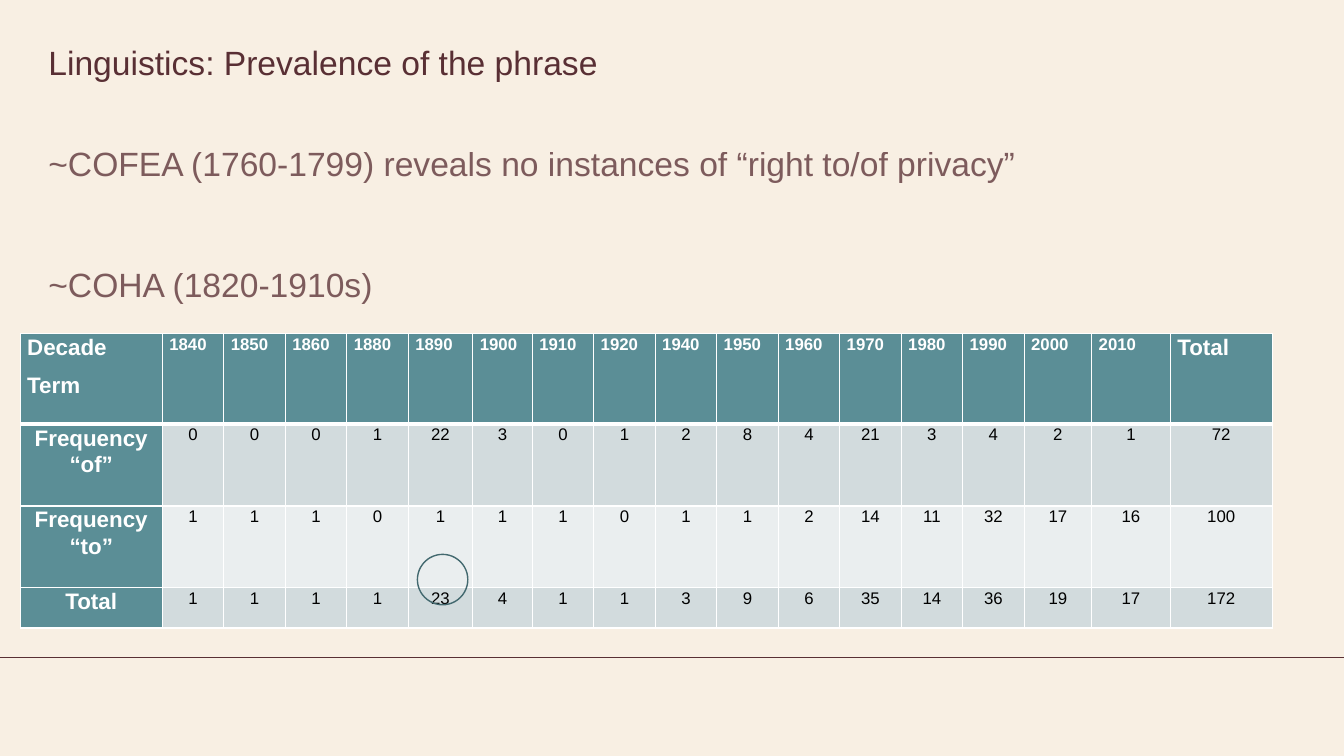
from dataclasses import dataclass

from lxml import etree
from pptx import Presentation
from pptx.dml.color import RGBColor
from pptx.enum.shapes import MSO_CONNECTOR, MSO_SHAPE
from pptx.enum.text import MSO_ANCHOR, MSO_AUTO_SIZE, PP_ALIGN
from pptx.oxml.ns import qn
from pptx.util import Inches, Pt

STRAIGHT = MSO_CONNECTOR.STRAIGHT
CIRCLE = MSO_SHAPE.FLOWCHART_CONNECTOR
TOP = MSO_ANCHOR.TOP
NO_FIT = MSO_AUTO_SIZE.NONE
LEFT, CENTER = PP_ALIGN.LEFT, PP_ALIGN.CENTER


@dataclass(frozen=True)
class Theme:
    """Colours and type sizes of the slide."""
    font: str = "Arial"
    background: str = "F8EFE3"
    ink: str = "592F34"
    header: str = "5B8E96"
    bands: tuple = ("D2DBDD", "EAEEEF")
    white: str = "FFFFFF"
    black: str = "000000"
    ring: str = "43696F"
    heading_size: int = 24
    label_size: int = 16
    value_size: int = 12
    body_alpha: int = 77


THEME = Theme()
DECADES = [1840, 1850, 1860, 1880, 1890, 1900, 1910, 1920,
           1940, 1950, 1960, 1970, 1980, 1990, 2000, 2010]
OF_COUNTS = [0, 0, 0, 1, 22, 3, 0, 1, 2, 8, 4, 21, 3, 4, 2, 1]
TO_COUNTS = [1, 1, 1, 0, 1, 1, 1, 0, 1, 1, 2, 14, 11, 32, 17, 16]
COLUMN_WIDTHS = [1.41] + [0.61] * 4 + [0.64, 0.59] + [0.61] * 8 + [0.67, 0.78, 1.01]
ROW_HEIGHTS = [0.9, 0.81, 0.81, 0.4]


def rgb(code):
    """Turn a hex code into a colour."""
    return RGBColor.from_string(code)


def style_para(para, size, color, bold=False, align=LEFT):
    """Format a paragraph and its spans."""
    para.alignment = align
    for span in para.runs:
        span.font.name = THEME.font
        span.font.size = Pt(size)
        span.font.bold = bold
        span.font.color.rgb = rgb(color)


def fill_placeholder(box, area, lines):
    """Move a placeholder and set its lines in the heading style."""
    box.left, box.top, box.width, box.height = map(Inches, area)
    frame = box.text_frame
    frame.text = "\n".join(lines)
    frame.margin_left = frame.margin_right = 0
    frame.margin_top = frame.margin_bottom = 0
    frame.vertical_anchor = TOP
    frame.auto_size = NO_FIT
    frame.word_wrap = True
    for para in frame.paragraphs:
        style_para(para, THEME.heading_size, THEME.ink)


def format_findings(box):
    """Space the body lines, remove bullets and soften the ink."""
    for para, gap in zip(box.text_frame.paragraphs, (8, 52)):
        para.line_spacing = 1.2
        para.space_before = Pt(gap)
        properties = para._p.get_or_add_pPr()
        properties.set("marL", "0")
        properties.set("indent", "0")
        etree.SubElement(properties, qn("a:buNone"))
        for color in para._p.iter(qn("a:srgbClr")):
            etree.SubElement(color, qn("a:alpha"), val=str(THEME.body_alpha * 1000))


def add_rule(page, top, width):
    """Draw the horizontal rule across the page."""
    rule = page.shapes.add_connector(STRAIGHT, 0, top, width, top)
    rule.line.color.rgb = rgb(THEME.ink)
    rule.line.width = Pt(0.75)
    etree.SubElement(rule._element.spPr, qn("a:effectLst"))


def set_borders(cell, top, bottom):
    """Give a cell white borders of the given top and bottom widths."""
    properties = cell._tc.get_or_add_tcPr()
    for side, width in (("L", 1), ("R", 1), ("T", top), ("B", bottom)):
        line = etree.SubElement(properties, qn(f"a:ln{side}"), w=str(Pt(width)))
        fill = etree.SubElement(line, qn("a:solidFill"))
        etree.SubElement(fill, qn("a:srgbClr"), val=THEME.white)


def format_cell(cell, text, row, column):
    """Write one table cell, styled by its place in the grid."""
    is_header, is_label = row == 0, column == 0
    set_borders(cell, 3 if row == 1 else 1, 3 if is_header else 1)
    colored = is_header or is_label
    cell.fill.solid()
    cell.fill.fore_color.rgb = rgb(THEME.header if colored else THEME.bands[(row - 1) % 2])
    cell.margin_left = cell.margin_right = Inches(0.07)
    cell.margin_top = cell.margin_bottom = 0
    cell.text_frame.text = text
    large = is_label or text == "Total"
    for para in cell.text_frame.paragraphs:
        style_para(para, THEME.label_size if large else THEME.value_size,
                   THEME.white if colored else THEME.black,
                   colored, LEFT if is_header else CENTER)
        para.line_spacing = 1.07
        para.space_after = Pt(8)


def add_frequency_table(page):
    """Add the counts by decade, with computed totals."""
    totals = [of + to for of, to in zip(OF_COUNTS, TO_COUNTS)]
    rows = [["Decade\nTerm", *DECADES, "Total"]]
    for label, counts in (("Frequency “of”", OF_COUNTS),
                          ("Frequency “to”", TO_COUNTS), ("Total", totals)):
        rows.append([label, *counts, sum(counts)])
    table = page.shapes.add_table(
        len(rows), len(rows[0]), Inches(0.2), Inches(3.31),
        Inches(sum(COLUMN_WIDTHS)), Inches(sum(ROW_HEIGHTS))).table
    for column, width in zip(table.columns, COLUMN_WIDTHS):
        column.width = Inches(width)
    for row, height in zip(table.rows, ROW_HEIGHTS):
        row.height = Inches(height)
    for row, values in enumerate(rows):
        for column, value in enumerate(values):
            format_cell(table.cell(row, column), str(value), row, column)
    table.cell(0, 0).text_frame.paragraphs[0].space_before = Pt(20)


def add_ring(page):
    """Circle the 1890 total."""
    ring = page.shapes.add_shape(CIRCLE, Inches(4.14), Inches(5.5), Inches(0.5), Inches(0.5))
    ring.shadow.inherit = False
    ring.fill.background()
    ring.line.color.rgb = rgb(THEME.ring)
    ring.line.width = Pt(1)


def main():
    """Build and save the deck."""
    deck = Presentation()
    deck.slide_width, deck.slide_height = Inches(13.33), Inches(7.5)
    page = deck.slides.add_slide(deck.slide_layouts[1])
    page.background.fill.solid()
    page.background.fill.fore_color.rgb = rgb(THEME.background)
    title, body = page.placeholders
    add_rule(page, Inches(6.52), deck.slide_width)
    fill_placeholder(title, (0.48, 0.42, 8.32, 1.5),
                     ["Linguistics: Prevalence of the phrase"])
    fill_placeholder(body, (0.48, 1.34, 12.13, 0.81),
                     ["~COFEA (1760-1799) reveals no instances of “right to/of privacy”",
                      "~COHA (1820-1910s)"])
    format_findings(body)
    add_frequency_table(page)
    add_ring(page)
    deck.save("out.pptx")


if __name__ == "__main__":
    main()
